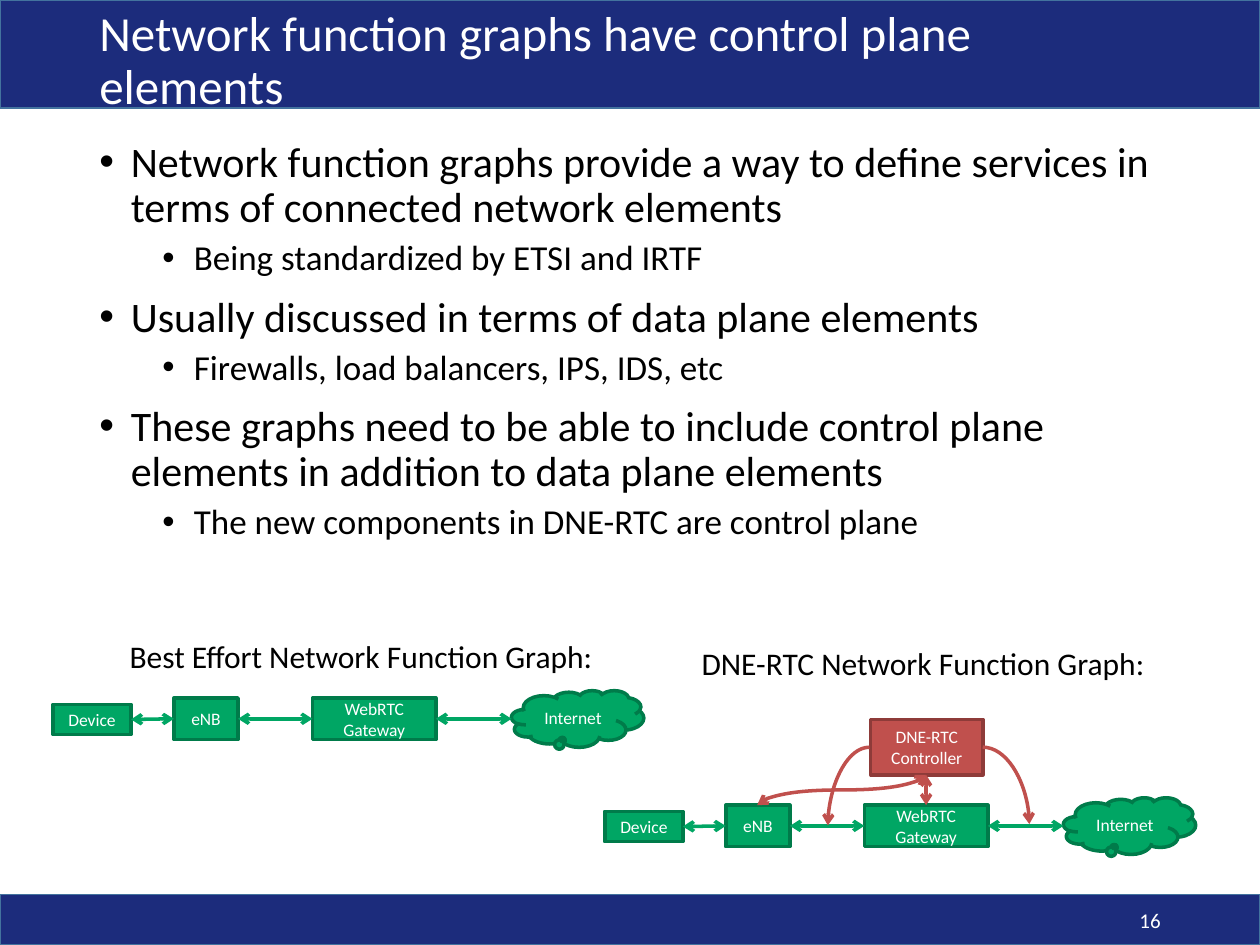
from dataclasses import dataclass
from typing import Any, NamedTuple

from lxml.etree import SubElement
from pptx import Presentation
from pptx.dml.color import RGBColor
from pptx.enum.shapes import MSO_CONNECTOR, MSO_SHAPE
from pptx.enum.text import MSO_ANCHOR, MSO_AUTO_SIZE, PP_ALIGN
from pptx.oxml.ns import qn
from pptx.util import Inches, Pt


@dataclass(frozen=True)
class Theme:
    font: str = "Calibri"
    navy: str = "1C2C7C"
    rim: str = "43739E"
    white: str = "FFFFFF"
    black: str = "000000"
    green: str = "00A664"
    pine: str = "007B4A"
    red: str = "C0504D"
    maroon: str = "8E3B39"
    title: int = 28
    body: tuple = (24, 20)
    label: int = 18
    page: int = 12
    node: int = 10
    stroke: int = 2


class Box(NamedTuple):
    x: float
    y: float
    w: float
    h: float


class Node(NamedTuple):
    text: str
    box: Box
    kind: MSO_SHAPE = MSO_SHAPE.RECTANGLE


class Curve(NamedTuple):
    box: Box
    preset: str
    turn: int
    flips: str
    both: bool


THEME = Theme()
POINTS = (
    (0, "Network function graphs provide a way to define services in terms of connected network elements"),
    (1, "Being standardized by ETSI and IRTF"),
    (0, "Usually discussed in terms of data plane elements"),
    (1, "Firewalls, load balancers, IPS, IDS, etc"),
    (0, "These graphs need to be able to include control plane elements in addition to data plane elements"),
    (1, "The new components in DNE-RTC are control plane"),
)
CHAIN = (
    Node("Device", Box(0.42, 5.59, 0.62, 0.24)),
    Node("eNB", Box(1.38, 5.54, 0.51, 0.33)),
    Node("WebRTC Gateway", Box(2.48, 5.54, 0.98, 0.33)),
    Node("Internet", Box(4.06, 5.48, 1.05, 0.45), MSO_SHAPE.CLOUD_CALLOUT),
)
CONTROL = Node("DNE-RTC\vController", Box(6.91, 5.71, 0.89, 0.44))
CURVES = (
    Curve(Box(6.56, 5.6, 0.24, 1.34), "curvedConnector3", 90, "HV", True),
    Curve(Box(6.57, 5.93, 0.33, 0.62), "curvedConnector2", 180, "V", False),
    Curve(Box(7.23, 6.27, 0.24, 0), "curvedConnector3", 90, "", True),
    Curve(Box(7.8, 5.93, 0.37, 0.61), "curvedConnector2", 0, "", False),
)
CAPTIONS = (
    ("Best Effort Network Function Graph:", Box(0.93, 5.01, 3.92, 0.4)),
    ("DNE-RTC Network Function Graph:", Box(5.47, 5.06, 3.76, 0.4)),
)


def rgb(code: str) -> RGBColor:
    return RGBColor.from_string(code)


def inch(box: Box) -> list:
    return [Inches(v) for v in box]


def apply(item: Any, form: dict) -> None:
    for key, value in form.items():
        setattr(item, key, value)


def write(para: Any, text: str, size: int, color: str, **form: Any) -> None:
    para.text = text
    apply(para, form)
    for run in para.runs:
        apply(run.font, {"name": THEME.font, "size": Pt(size)})
        run.font.color.rgb = rgb(color)


def frame(slide: Any, box: Box, **form: Any) -> Any:
    area = slide.shapes.add_textbox(*inch(box)).text_frame
    apply(area, {"word_wrap": True, **form})
    return area


def block(shapes: Any, kind: MSO_SHAPE, box: Box, fill: str, edge: str, width: float) -> Any:
    shape = shapes.add_shape(kind, *inch(box))
    shape.shadow.inherit = False
    shape.fill.solid()
    shape.fill.fore_color.rgb = rgb(fill)
    shape.line.color.rgb = rgb(edge)
    shape.line.width = Pt(width)
    return shape


def draw_node(shapes: Any, node: Node, fill: str, edge: str) -> Any:
    shape = block(shapes, node.kind, node.box, fill, edge, THEME.stroke)
    if node.kind == MSO_SHAPE.CLOUD_CALLOUT:
        shape.adjustments[0] = -0.11
        shape.adjustments[1] = 0.36
    area = shape.text_frame
    apply(area, {"word_wrap": True, "vertical_anchor": MSO_ANCHOR.MIDDLE})
    write(area.paragraphs[0], node.text, THEME.node, THEME.white, alignment=PP_ALIGN.CENTER)
    return shape


def finish(link: Any, color: str, both: bool) -> None:
    link.line.color.rgb = rgb(color)
    link.line.width = Pt(THEME.stroke)
    line = link.line._get_or_add_ln()
    for end in ("a:headEnd", "a:tailEnd") if both else ("a:tailEnd",):
        SubElement(line, qn(end), type="arrow")
    SubElement(link.element.spPr, qn("a:effectLst"))


def draw_chain(shapes: Any, dx: float, dy: float) -> None:
    nodes = []
    for node in CHAIN:
        box = node.box._replace(x=node.box.x + dx, y=node.box.y + dy)
        nodes.append(draw_node(shapes, node._replace(box=box), THEME.green, THEME.pine))
    for left, right in zip(nodes, nodes[1:]):
        start = left.left + left.width, left.top + left.height // 2
        stop = right.left, right.top + right.height // 2
        link = shapes.add_connector(MSO_CONNECTOR.STRAIGHT, *start, *stop)
        link.begin_connect(left, 3)
        if right is not nodes[-1]:
            link.end_connect(right, 1)
        finish(link, THEME.green, True)


def draw_curve(shapes: Any, curve: Curve) -> None:
    x, y, w, h = inch(curve.box)
    link = shapes.add_connector(MSO_CONNECTOR.CURVE, x, y, x + w, y + h)
    props = link.element.spPr
    props.find(qn("a:prstGeom")).set("prst", curve.preset)
    form = props.find(qn("a:xfrm"))
    form.set("rot", str(curve.turn * 60000))
    for axis in curve.flips:
        form.set("flip" + axis, "1")
    finish(link, THEME.red, curve.both)


def draw_points(slide: Any) -> None:
    area = frame(slide, Box(0.69, 1.07, 8.62, 3.51))
    for i, (level, text) in enumerate(POINTS):
        para = area.add_paragraph() if i else area.paragraphs[0]
        write(para, text, THEME.body[level], THEME.black,
              level=level, line_spacing=0.9, space_before=Pt(5 if level else 10))
        props = para._p.get_or_add_pPr()
        props.set("marL", str(Inches(0.25 + 0.5 * level)))
        props.set("indent", str(Inches(-0.25)))
        SubElement(props, qn("a:buFont"), typeface="Arial")
        SubElement(props, qn("a:buChar"), char="•")


def main() -> None:
    deck = Presentation()
    apply(deck, {"slide_width": Inches(10), "slide_height": Inches(7.5)})
    slide = deck.slides.add_slide(deck.slide_layouts[6])
    for band in (Box(0, 7.1, 10, 0.4), Box(0, 0, 10, 0.86)):
        block(slide.shapes, MSO_SHAPE.RECTANGLE, band, THEME.navy, THEME.rim, 1)
    head = frame(slide, Box(0.69, 0.12, 8.62, 0.74), vertical_anchor=MSO_ANCHOR.MIDDLE)
    write(head.paragraphs[0], "Network function graphs have control plane elements",
          THEME.title, THEME.white, line_spacing=0.9)
    draw_points(slide)
    foot = frame(slide, Box(7.06, 7.1, 2.25, 0.4), vertical_anchor=MSO_ANCHOR.MIDDLE)
    write(foot.paragraphs[0], "16", THEME.page, THEME.white, alignment=PP_ALIGN.RIGHT)
    for text, box in CAPTIONS:
        area = frame(slide, box, word_wrap=False, auto_size=MSO_AUTO_SIZE.SHAPE_TO_FIT_TEXT)
        write(area.paragraphs[0], text, THEME.label, THEME.black)
    draw_chain(slide.shapes.add_group_shape().shapes, 0, 0)
    graph = slide.shapes.add_group_shape().shapes
    draw_chain(graph, 4.38, 0.85)
    draw_node(graph, CONTROL, THEME.red, THEME.maroon)
    for curve in CURVES:
        draw_curve(graph, curve)
    deck.save("out.pptx")


if __name__ == "__main__":
    main()
